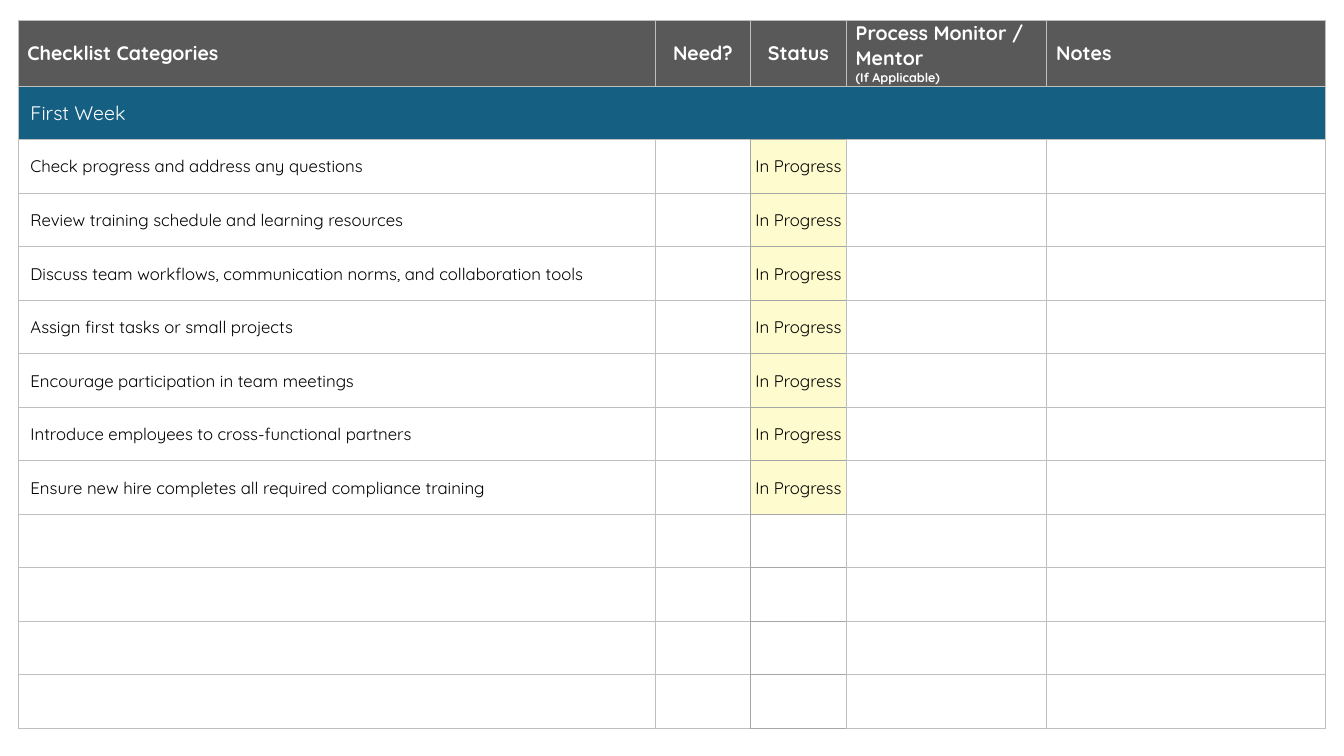
"""Build a first-week onboarding checklist slide."""
from copy import deepcopy

from lxml import etree
from pptx import Presentation
from pptx import util as u
from pptx.dml.color import RGBColor
from pptx.enum import text
from pptx.oxml.ns import qn

PX = 9525
FONT = "Quicksand"
WHITE = RGBColor(0xFF, 0xFF, 0xFF)
BLACK = RGBColor(0x00, 0x00, 0x00)
GREY = RGBColor(0x59, 0x59, 0x59)
BLUE = RGBColor(0x15, 0x60, 0x82)
YELLOW = RGBColor(0xFE, 0xFC, 0xCE)
LINE = RGBColor(0xBF, 0xBF, 0xBF)
STATUS_LINE = RGBColor(0xA6, 0xA6, 0xA6)

COLS = [607, 91, 91, 191, 265]
NEED, STATUS = 1, 2
HEADER_H, ROW_H, ROWS = 62, 51, 13
HEADERS = ["Checklist Categories", "Need?", "Status",
           "Process Monitor / Mentor \v(If Applicable)", "Notes"]
TASKS = [
    "Check progress and address any questions",
    "Review training schedule and learning resources",
    "Discuss team workflows, communication norms, and collaboration tools",
    "Assign first tasks or small projects",
    "Encourage participation in team meetings",
    "Introduce employees to cross-functional partners",
    "Ensure new hire completes all required compliance training",
]


def px(n):
    """Turn whole pixels into EMU."""
    return u.Emu(n * PX)


def set_borders(cell, dark=""):
    """Draw thin borders, darker on the sides named in dark."""
    tcPr = cell._tc.get_or_add_tcPr()
    for side in "LRTB":
        ln = etree.SubElement(tcPr, qn(f"a:ln{side}"), w=str(u.Pt(0.5)))
        fill = etree.SubElement(ln, qn("a:solidFill"))
        color = STATUS_LINE if side in dark else LINE
        etree.SubElement(fill, qn("a:srgbClr"), val=str(color))


def set_fill(cell, color):
    """Fill a cell, or leave it clear when color is None."""
    if color is None:
        cell.fill.background()
    else:
        cell.fill.solid()
        cell.fill.fore_color.rgb = color


def set_text(cell, words, size, color, left=1, bold=False, center=False):
    """Write formatted text, with any second line in small type."""
    cell.vertical_anchor = text.MSO_ANCHOR.MIDDLE
    cell.margin_left = px(left)
    cell.margin_right = cell.margin_top = px(1)
    cell.margin_bottom = 0
    p = cell.text_frame.paragraphs[0]
    p.text = words
    p.alignment = text.PP_ALIGN.CENTER if center else text.PP_ALIGN.LEFT
    for i, r in enumerate(p.runs):
        r.font.name = FONT
        r.font.size = u.Pt(9 if i else size)
        r.font.bold = bold
        r.font.color.rgb = color
    for br in p._p.findall(qn("a:br")):
        br.append(deepcopy(p.runs[0]._r.rPr))


def add_grid(s):
    """Add the empty table with its column widths and row heights."""
    height = HEADER_H + ROW_H * (ROWS - 1)
    frame = s.shapes.add_table(ROWS, len(COLS), px(17), px(19),
                               px(sum(COLS)), px(height))
    table = frame.table
    table.first_row = table.horz_banding = False
    for col, width in zip(table.columns, COLS):
        col.width = px(width)
    for i, row in enumerate(table.rows):
        row.height = px(ROW_H if i else HEADER_H)
    return table


def fill_header(table):
    """Fill the heading row and the section row."""
    for c, words in enumerate(HEADERS):
        cell = table.cell(0, c)
        center = c in (NEED, STATUS)
        set_borders(cell)
        set_fill(cell, GREY)
        set_text(cell, words, 14, WHITE, 1 if center else 9, True, center)
        set_borders(table.cell(1, c))
        set_fill(table.cell(1, c), BLUE)
    section = table.cell(1, 0)
    section.merge(table.cell(1, len(COLS) - 1))
    set_text(section, "First Week", 14, WHITE, 12)


def fill_tasks(table):
    """Fill the task rows and the blank rows below them."""
    dark_sides = {NEED: "R", STATUS: "LTB"}
    for i in range(ROWS - 2):
        has_task = i < len(TASKS)
        for c in range(len(COLS)):
            cell = table.cell(i + 2, c)
            set_borders(cell, dark_sides.get(c, ""))
            if c == STATUS:
                set_fill(cell, YELLOW if has_task else None)
            else:
                set_fill(cell, WHITE)
        if has_task:
            set_text(table.cell(i + 2, 0), TASKS[i], 12, BLACK, 12)
            set_text(table.cell(i + 2, STATUS), "In Progress", 12, BLACK,
                     center=True)


def main():
    """Create and save the slide."""
    prs = Presentation()
    prs.slide_width, prs.slide_height = px(1280), px(720)
    s = prs.slides.add_slide(prs.slide_layouts[6])
    table = add_grid(s)
    fill_header(table)
    fill_tasks(table)
    prs.save("out.pptx")


if __name__ == "__main__":
    main()
